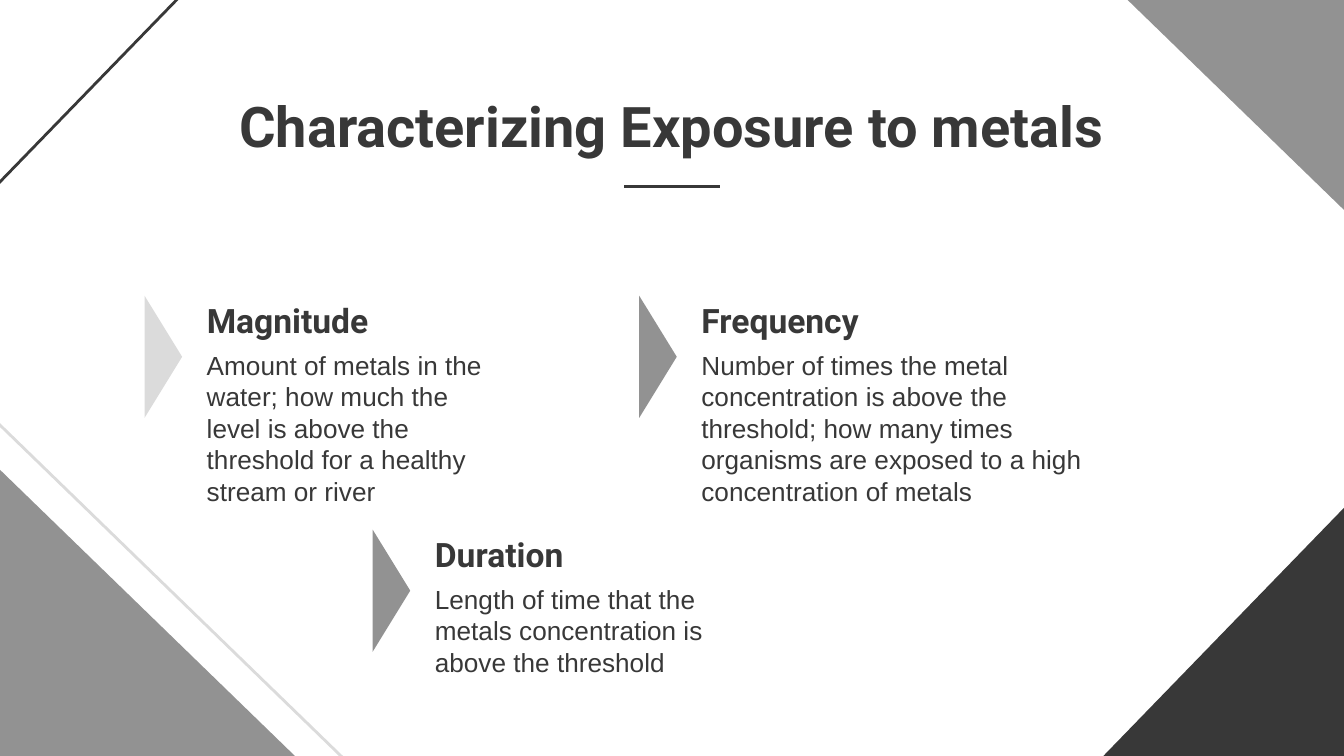
from lxml import etree
from pptx import Presentation
from pptx.dml.color import RGBColor
from pptx.enum import shapes, text
from pptx.oxml.ns import qn
from pptx.util import Pt

DARK = RGBColor(0x38, 0x38, 0x38)
GRAY = RGBColor(0x92, 0x92, 0x92)
LIGHT = RGBColor(0xDB, 0xDB, 0xDB)

PAGE_WIDTH, PAGE_HEIGHT = 720, 405
LARGE = (267.84, 259.92)
SMALL = (166.32, 161.28)
CHEVRON_WIDTH, CHEVRON_HEIGHT = 20.16, 65.52
TEXT_OFFSET = 26.3

# Left, top, size, rotation, fill, outline
CORNERS = [
    (576, 254.16, SMALL, 270, DARK, None),
    (-41.04, 187.92, LARGE, 0, None, LIGHT),
    (-58.32, 195.12, LARGE, 0, GRAY, None),
    (529.92, -72, LARGE, 180, GRAY, None),
    (-20.88, -149.04, LARGE, 90, None, DARK),
]

# Left, top, body width, chevron colour, heading, body
ITEMS = [
    (77.4, 158.4, 175, LIGHT, "Magnitude",
     "Amount of metals in the water; how much the level is above the "
     "threshold for a healthy stream or river"),
    (342.4, 158.4, 224, GRAY, "Frequency",
     "Number of times the metal concentration is above the threshold; "
     "how many times organisms are exposed to a high concentration of metals"),
    (199.6, 283.7, 175, GRAY, "Duration",
     "Length of time that the metals concentration is above the threshold"),
]


def add_triangle(page, kind, left, top, width, height, rotation, fill, outline=None):
    triangle = page.shapes.add_shape(kind, Pt(left), Pt(top), Pt(width), Pt(height))
    triangle.shadow.inherit = False
    triangle.rotation = rotation
    if fill is None:
        triangle.fill.background()
    else:
        triangle.fill.solid()
        triangle.fill.fore_color.rgb = fill
    if outline is None:
        triangle.line.fill.background()
    else:
        triangle.line.color.rgb = outline
        triangle.line.width = Pt(1.5)


def add_text(page, left, top, width, height, words, size, font, bold=False,
             anchor=text.MSO_ANCHOR.TOP, align=text.PP_ALIGN.LEFT):
    box = page.shapes.add_textbox(Pt(left), Pt(top), Pt(width), Pt(height))
    frame = box.text_frame
    frame.word_wrap = True
    frame.vertical_anchor = anchor
    frame.margin_left = frame.margin_right = Pt(7.2)
    frame.margin_top = frame.margin_bottom = Pt(7.2)
    para = frame.paragraphs[0]
    para.alignment = align
    span = para.add_run()
    span.text = words
    span.font.name = font
    span.font.size = Pt(size)
    span.font.bold = bold
    span.font.color.rgb = DARK


def add_corners(page):
    for left, top, (width, height), rotation, fill, outline in CORNERS:
        add_triangle(page, shapes.MSO_SHAPE.RIGHT_TRIANGLE, left, top,
                     width, height, rotation, fill, outline)


def add_title(page, left, top, width, height):
    add_text(page, left, top, width, height, "Characterizing Exposure to metals",
             30, "Roboto", bold=True, align=text.PP_ALIGN.CENTER)

    # Short rule centred under the title
    middle, rule_top = PAGE_WIDTH / 2, top + 58.3
    rule = page.shapes.add_connector(shapes.MSO_CONNECTOR.STRAIGHT,
                                     Pt(middle - 25.5), Pt(rule_top),
                                     Pt(middle + 25.5), Pt(rule_top))
    rule.line.color.rgb = DARK
    rule.line.width = Pt(1.5)
    etree.SubElement(rule._element.spPr, qn("a:effectLst"))


def add_item(page, left, top, body_width, color, heading, body):
    # Chevron: an upright triangle turned about its centre
    shift = (CHEVRON_HEIGHT - CHEVRON_WIDTH) / 2
    add_triangle(page, shapes.MSO_SHAPE.ISOSCELES_TRIANGLE, left - shift, top + shift,
                 CHEVRON_HEIGHT, CHEVRON_WIDTH, 90, color)

    # Heading and explanation
    text_left = left + TEXT_OFFSET
    add_text(page, text_left, top, 154, 26.6, heading, 18, "Roboto", bold=True,
             anchor=text.MSO_ANCHOR.MIDDLE)
    add_text(page, text_left, top + 21.6, body_width, 46, body, 14, "Arial")


def main():
    deck = Presentation()
    deck.slide_width, deck.slide_height = Pt(PAGE_WIDTH), Pt(PAGE_HEIGHT)
    page = deck.slides.add_slide(deck.slide_layouts[6])
    add_corners(page)
    for item in ITEMS:
        add_item(page, *item)
    add_title(page, 56.2, 41.8, 607, 41.8)
    deck.save("out.pptx")


if __name__ == "__main__":
    main()
